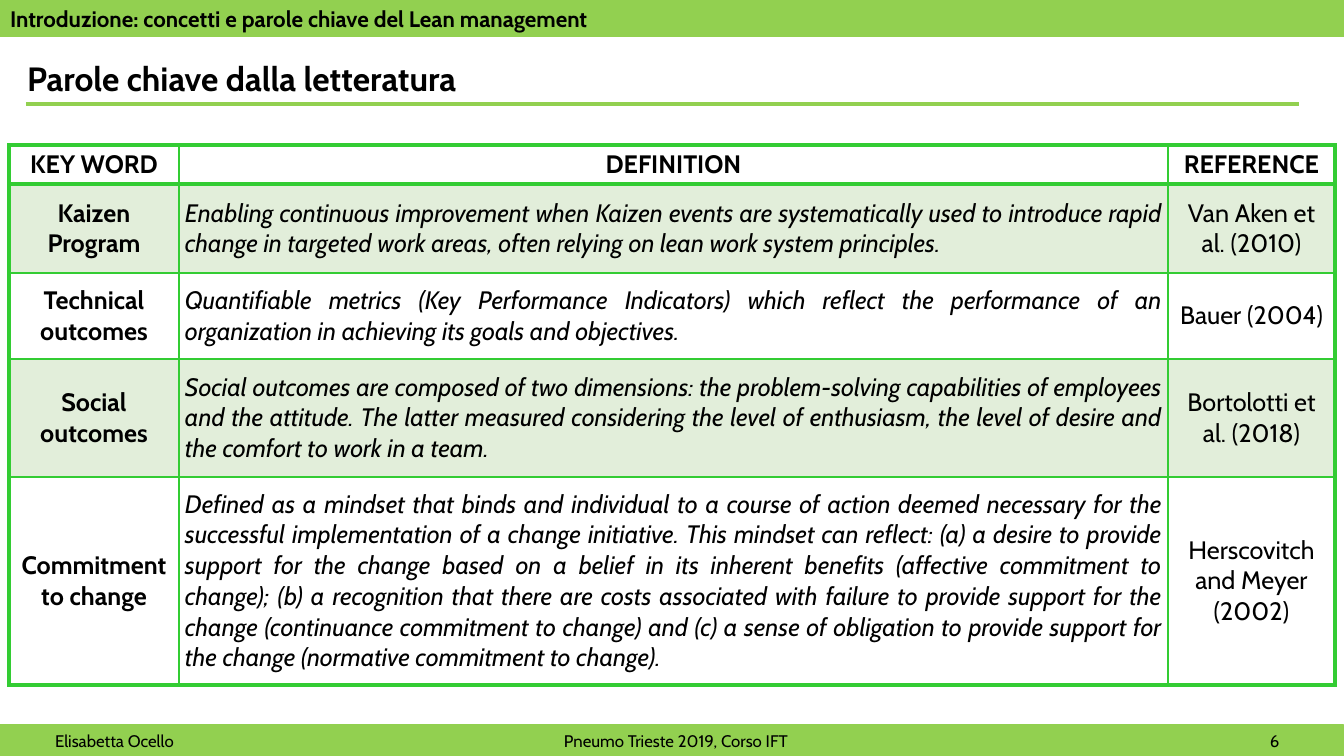
import dataclasses

import pptx
import pptx.dml.color
import pptx.enum.shapes
import pptx.enum.text
import pptx.oxml.ns
import pptx.util
from lxml import etree

ALIGN = pptx.enum.text.PP_ALIGN
MIDDLE = pptx.enum.text.MSO_ANCHOR.MIDDLE


@dataclasses.dataclass(frozen=True)
class Theme:
    font: str = "Cabin"
    ink: str = "000000"
    bar: str = "92D050"
    border: str = "33CC33"
    band: str = "70AD47"
    band_opacity: int = 20
    title_size: int = 24
    table_size: int = 18
    banner_size: int = 16
    footer_size: int = 12
    thick: int = 3
    thin: int = 1


THEME = Theme()
COLUMN_WIDTHS = [170, 989, 167]
ROW_HEIGHTS = [39, 89, 86, 118, 208]
HEADINGS = ("KEY WORD", "DEFINITION", "REFERENCE")
KEYWORDS = [
    ("Kaizen\nProgram",
     "Enabling continuous improvement when Kaizen events are systematically used to introduce "
     "rapid change in targeted work areas, often relying on lean work system principles.",
     "Van Aken et al. (2010)"),
    ("Technical outcomes",
     "Quantifiable metrics (Key Performance Indicators) which reflect the performance of an "
     "organization in achieving its goals and objectives.",
     "Bauer (2004)"),
    ("Social\noutcomes",
     "Social outcomes are composed of two dimensions: the problem-solving capabilities of "
     "employees and the attitude. The latter measured considering the level of enthusiasm, the "
     "level of desire and the comfort to work in a team.",
     "Bortolotti et al. (2018)"),
    ("Commitment\nto change",
     "Defined as a mindset that binds and individual to a course of action deemed necessary for "
     "the successful implementation of a change initiative. This mindset can reflect: (a) a "
     "desire to provide support for the change based on a belief in its inherent benefits "
     "(affective commitment to change); (b) a recognition that there are costs associated with "
     "failure to provide support for the change (continuance commitment to change) and (c) a "
     "sense of obligation to provide support for the change (normative commitment to change).",
     "Herscovitch and Meyer (2002)"),
]


def px(length):
    return pptx.util.Emu(round(length * 914400 / 100.8))


def rgb(code):
    return pptx.dml.color.RGBColor.from_string(code)


def add_xml(parent, tag, **attributes):
    return etree.SubElement(parent, pptx.oxml.ns.qn(tag), attributes)


def style(paragraph, size, align=ALIGN.LEFT, bold=False, italic=False):
    paragraph.alignment = align
    font = paragraph.font
    font.name, font.size = THEME.font, pptx.util.Pt(size)
    font.bold, font.italic = bold, italic
    font.color.rgb = rgb(THEME.ink)


def draw_bar(slide, box, text, size, inset, bold=False, tab_stops=()):
    """Full-width coloured strip; tab stops are measured from the strip's left edge."""
    bar = slide.shapes.add_shape(pptx.enum.shapes.MSO_SHAPE.RECTANGLE, *map(px, box))
    bar.shadow.inherit = False
    bar.fill.solid()
    bar.fill.fore_color.rgb = bar.line.color.rgb = rgb(THEME.bar)
    bar.line.width = pptx.util.Pt(0.75)
    frame = bar.text_frame
    frame.word_wrap = True
    frame.vertical_anchor = MIDDLE
    frame.margin_left = px(inset)
    frame.margin_top = frame.margin_bottom = 0
    frame.text = text
    paragraph = frame.paragraphs[0]
    if tab_stops:
        tabs = add_xml(paragraph._p.get_or_add_pPr(), "a:tabLst")
        for stop in tab_stops:
            add_xml(tabs, "a:tab", pos=str(px(stop - inset)), algn="l")
    style(paragraph, size, bold=bold)


def draw_title(slide, box, text):
    left, top, width, height = box
    title = slide.shapes.title
    title.left, title.top, title.width, title.height = map(px, (left - 9, top, width, height))
    frame = title.text_frame
    frame.text = text
    frame.word_wrap = True
    frame.auto_size = pptx.enum.text.MSO_AUTO_SIZE.NONE
    frame.vertical_anchor = MIDDLE
    style(frame.paragraphs[0], THEME.title_size, bold=True)

    rule_y = px(top + height + 1)
    rule = slide.shapes.add_connector(
        pptx.enum.shapes.MSO_CONNECTOR.STRAIGHT, px(left), rule_y, px(left + width), rule_y)
    rule.line.color.rgb = rgb(THEME.bar)
    rule.line.width = pptx.util.Pt(2.25)
    add_xml(rule._element.spPr, "a:effectLst")


def draw_borders(cell, thick_sides):
    for side in "LRTB":
        points = THEME.thick if side in thick_sides else THEME.thin
        line = add_xml(cell._tc.get_or_add_tcPr(), f"a:ln{side}", w=str(pptx.util.Pt(points)))
        add_xml(add_xml(line, "a:solidFill"), "a:srgbClr", val=THEME.border)


def fill_cell(cell, banded):
    if not banded:
        cell.fill.background()
        return
    cell.fill.solid()
    cell.fill.fore_color.rgb = rgb(THEME.band)
    colour = cell._tc.tcPr.find(".//" + pptx.oxml.ns.qn("a:solidFill") + "[last()]/..")
    solid = cell._tc.tcPr.findall(pptx.oxml.ns.qn("a:solidFill"))[-1]
    add_xml(solid[0], "a:alpha", val=str(THEME.band_opacity * 1000))


def draw_keywords(slide, left, top):
    rows = [HEADINGS, *KEYWORDS]
    last_row, last_column = len(rows) - 1, len(HEADINGS) - 1
    table = slide.shapes.add_table(
        len(rows), len(HEADINGS), px(left), px(top),
        px(sum(COLUMN_WIDTHS)), px(sum(ROW_HEIGHTS))).table
    table.first_row = table.horz_banding = False
    for column, width in zip(table.columns, COLUMN_WIDTHS):
        column.width = px(width)
    for r, texts in enumerate(rows):
        table.rows[r].height = px(ROW_HEIGHTS[r])
        for c, text in enumerate(texts):
            cell = table.cell(r, c)
            cell.margin_left = cell.margin_right = px(6)
            cell.margin_top = cell.margin_bottom = 0
            cell.vertical_anchor = MIDDLE
            cell.text_frame.text = text
            is_definition = r > 0 and c == 1
            for paragraph in cell.text_frame.paragraphs:
                style(paragraph, THEME.table_size,
                      ALIGN.JUSTIFY if is_definition else ALIGN.CENTER,
                      bold=r == 0 or c == 0, italic=is_definition)
            thick = {"L": c == 0, "R": c == last_column,
                     "T": r <= 1, "B": r in (0, last_row)}
            draw_borders(cell, [side for side in thick if thick[side]])
            fill_cell(cell, banded=r % 2 == 1)


def main():
    deck = pptx.Presentation()
    deck.slide_width, deck.slide_height = px(1344), px(756)
    slide = deck.slides.add_slide(deck.slide_layouts[5])
    draw_title(slide, (26, 53, 1273, 50), "Parole chiave dalla letteratura")
    draw_keywords(slide, 9, 145)
    draw_bar(slide, (0, 0, 1344, 37),
             "Introduzione: concetti e parole chiave del Lean management",
             THEME.banner_size, inset=10, bold=True)
    draw_bar(slide, (0, 725, 1344, 31),
             "Elisabetta Ocello\tPneumo Trieste 2019, Corso IFT\t6",
             THEME.footer_size, inset=55, tab_stops=(564, 1270))
    deck.save("out.pptx")


if __name__ == "__main__":
    main()
